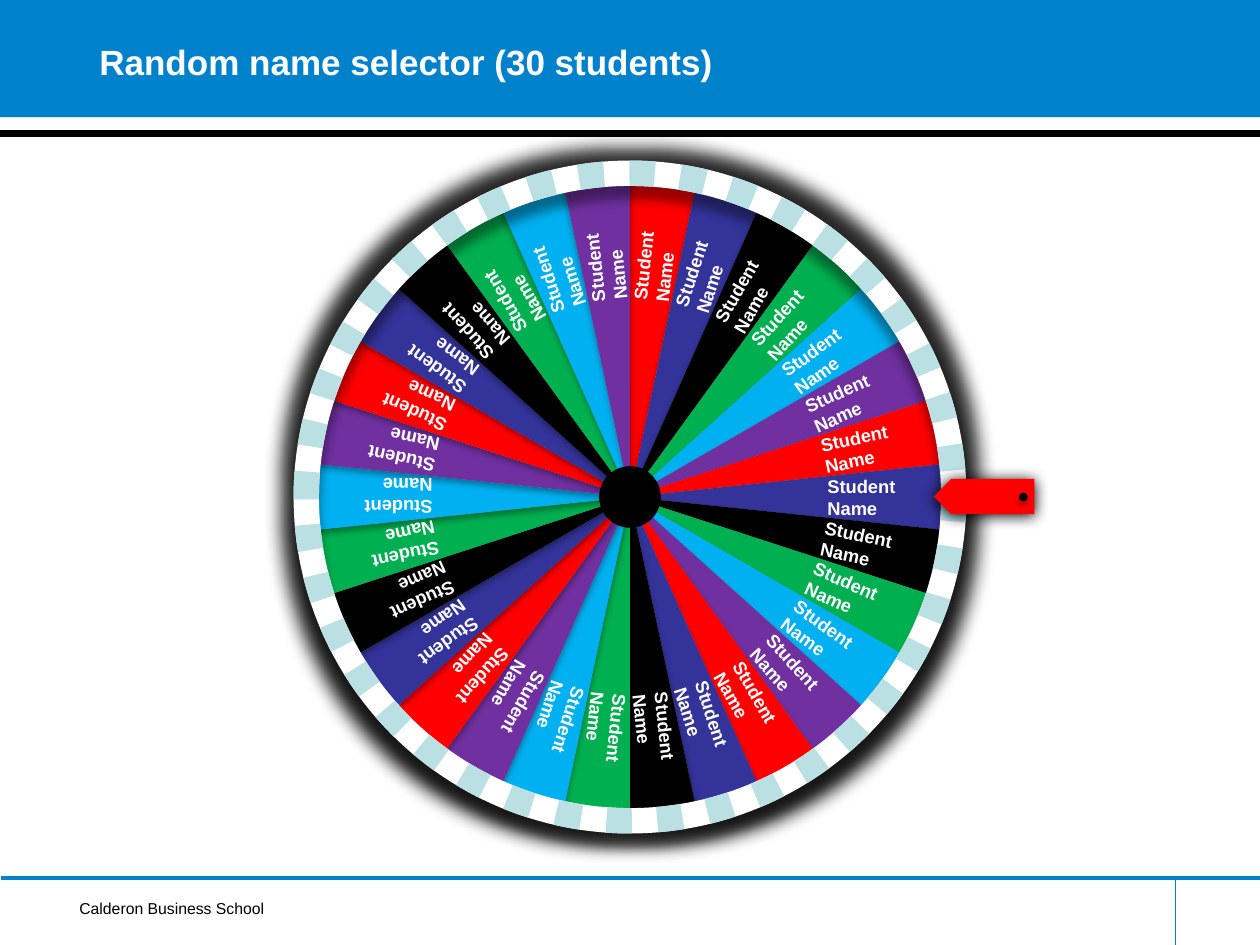
import math

import lxml.etree
import pptx
import pptx.dml.color
import pptx.enum.dml
import pptx.enum.shapes
import pptx.enum.text
import pptx.oxml.ns
import pptx.util

Pt = pptx.util.Pt
RGB = pptx.dml.color.RGBColor.from_string
SHAPE = pptx.enum.shapes.MSO_SHAPE
ANCHOR = pptx.enum.text.MSO_ANCHOR
qn = pptx.oxml.ns.qn

THEME = {
    "font": "Arial",
    "title": 20, "label": 10.5, "footer": 9,
    "blue": "0081CC", "black": "000000", "white": "FFFFFF", "red": "FF0000",
    "rim": "BBE0E3", "rim_edge": "8AA6A8",
    "wedges": ["FF0000", "333399", "000000", "00B050", "00B0F0", "7030A0"],
}
# Effects: alpha in percent, blur, distance and radius in points
SOFT = {"alpha": 32, "blurRad": 3.5, "dist": 2.2}
RING = {"alpha": 40, "blurRad": 6, "dist": 8}
POINTER = {"alpha": 100, "blurRad": 8.5, "dist": 1}
GLOW = {"alpha": 85, "rad": 20}


def paint(shape, fill=None, line=None, weight=0, effect=None):
    """Set fill, outline and an optional black shadow or glow."""
    shape.shadow.inherit = False
    for part, colour in ((shape.fill, fill), (shape.line.fill, line)):
        if colour:
            part.solid()
            part.fore_color.rgb = RGB(colour)
        else:
            part.background()
    if line:
        shape.line.width = Pt(weight)
    if effect:
        effects = shape._element.spPr.find(qn("a:effectLst"))
        kind = "a:glow" if "rad" in effect else "a:outerShdw"
        node = lxml.etree.SubElement(effects, qn(kind))
        for name, value in effect.items():
            if name != "alpha":
                node.set(name, str(int(Pt(value))))
        if kind == "a:outerShdw":
            node.set("dir", "5400000")
            node.set("algn", "ctr")
            node.set("rotWithShape", "0")
        colour = lxml.etree.SubElement(node, qn("a:srgbClr"), val=THEME["black"])
        lxml.etree.SubElement(colour, qn("a:alpha"), val=str(effect["alpha"] * 1000))


def add_text(text, box, size, colour, bold=True, rotation=0, **frame_format):
    """Add a one-paragraph text box."""
    shape = slide.shapes.add_textbox(*map(Pt, box))
    shape.rotation = rotation
    for name, value in ({"word_wrap": True} | frame_format).items():
        setattr(shape.text_frame, name, value)
    paragraph = shape.text_frame.paragraphs[0]
    paragraph.text = text
    font_format = {"name": THEME["font"], "size": Pt(THEME[size]), "bold": bold}
    for name, value in font_format.items():
        setattr(paragraph.font, name, value)
    paragraph.font.color.rgb = RGB(THEME[colour])


presentation = pptx.Presentation()
presentation.slide_width, presentation.slide_height = Pt(720), Pt(540)
slide = presentation.slides.add_slide(presentation.slide_layouts[6])

# Header band
band = slide.shapes.add_shape(SHAPE.RECTANGLE, 0, 0, Pt(720), Pt(67))
paint(band, THEME["blue"])

# Rules under the header and around the footer
for x1, y1, x2, y2, colour, weight in (
    (0, 76.3, 720, 76.3, "black", 4),
    (0.7, 501.8, 720.7, 501.8, "blue", 2),
    (671.8, 501.8, 671.8, 540, "blue", 1),
):
    rule = slide.shapes.add_connector(
        pptx.enum.shapes.MSO_CONNECTOR.STRAIGHT, *map(Pt, (x1, y1, x2, y2)))
    rule.line.color.rgb = RGB(THEME[colour])
    rule.line.width = Pt(weight)
    lxml.etree.SubElement(rule._element.spPr, qn("a:effectLst"))

# Footer
add_text("Calderon Business School", (38.9, 509.8, 126.7, 18), "footer", "black",
         bold=False, word_wrap=False, margin_left=Pt(6.5), margin_right=Pt(6.5))

# Wheel
CENTRE_X, CENTRE_Y = 360, 284
WEDGE_RADIUS, LABEL_RADIUS, RING_RADIUS, RIM_RADIUS, HUB_RADIUS = 184, 145, 185, 188, 17.6
STUDENTS = 30
STEP = 360 / STUDENTS
ARC_PARTS = 8
LABEL_WIDTH, LABEL_HEIGHT = 78.5, 32.4

rim, hub, ring, dots = (
    (CENTRE_X - radius, CENTRE_Y - radius, 2 * radius, 2 * radius)
    for radius in (RIM_RADIUS, HUB_RADIUS, RING_RADIUS, RING_RADIUS))

paint(slide.shapes.add_shape(SHAPE.OVAL, *map(Pt, rim)),
      THEME["rim"], THEME["rim_edge"], 2, GLOW)

# Wedges, clockwise from the top
for index in range(STUDENTS):
    arc = []
    for part in range(ARC_PARTS + 1):
        angle = math.radians(STEP * (index + part / ARC_PARTS) - 90)
        arc.append((Pt(CENTRE_X + WEDGE_RADIUS * math.cos(angle)),
                    Pt(CENTRE_Y + WEDGE_RADIUS * math.sin(angle))))
    builder = slide.shapes.build_freeform(Pt(CENTRE_X), Pt(CENTRE_Y))
    builder.add_line_segments(arc, close=True)
    colours = THEME["wedges"]
    paint(builder.convert_to_shape(), colours[index % len(colours)], effect=SOFT)

# Names, one along the middle of each wedge
for index in range(STUDENTS):
    degrees = STEP * (index + 0.5) - 90
    angle = math.radians(degrees)
    left = CENTRE_X + LABEL_RADIUS * math.cos(angle) - LABEL_WIDTH / 2
    top = CENTRE_Y + LABEL_RADIUS * math.sin(angle) - LABEL_HEIGHT / 2
    add_text("Student Name", (left, top, LABEL_WIDTH, LABEL_HEIGHT),
             "label", "white", rotation=degrees % 360)

# Hub and dotted ring
paint(slide.shapes.add_shape(SHAPE.OVAL, *map(Pt, hub)), THEME["black"])
paint(slide.shapes.add_shape(SHAPE.OVAL, *map(Pt, ring)),
      line=THEME["white"], weight=14.5, effect=RING)
dotted_ring = slide.shapes.add_shape(SHAPE.OVAL, *map(Pt, dots))
paint(dotted_ring, line=THEME["rim"], weight=14.5)
dotted_ring.line.dash_style = pptx.enum.dml.MSO_LINE.ROUND_DOT

# Pointer with its pin
pointer = slide.shapes.add_shape(SHAPE.PENTAGON, *map(Pt, (533.5, 273.6, 57.6, 20.2)))
pointer.rotation = 180
paint(pointer, THEME["red"], effect=POINTER)
pin = slide.shapes.add_shape(SHAPE.OVAL, *map(Pt, (582.3, 281.5, 5, 5)))
paint(pin, THEME["black"], effect=SOFT)

# Title
add_text("Random name selector (30 students)", (49.7, -10, 648, 90), "title", "white",
         vertical_anchor=ANCHOR.MIDDLE)

presentation.save("out.pptx")
